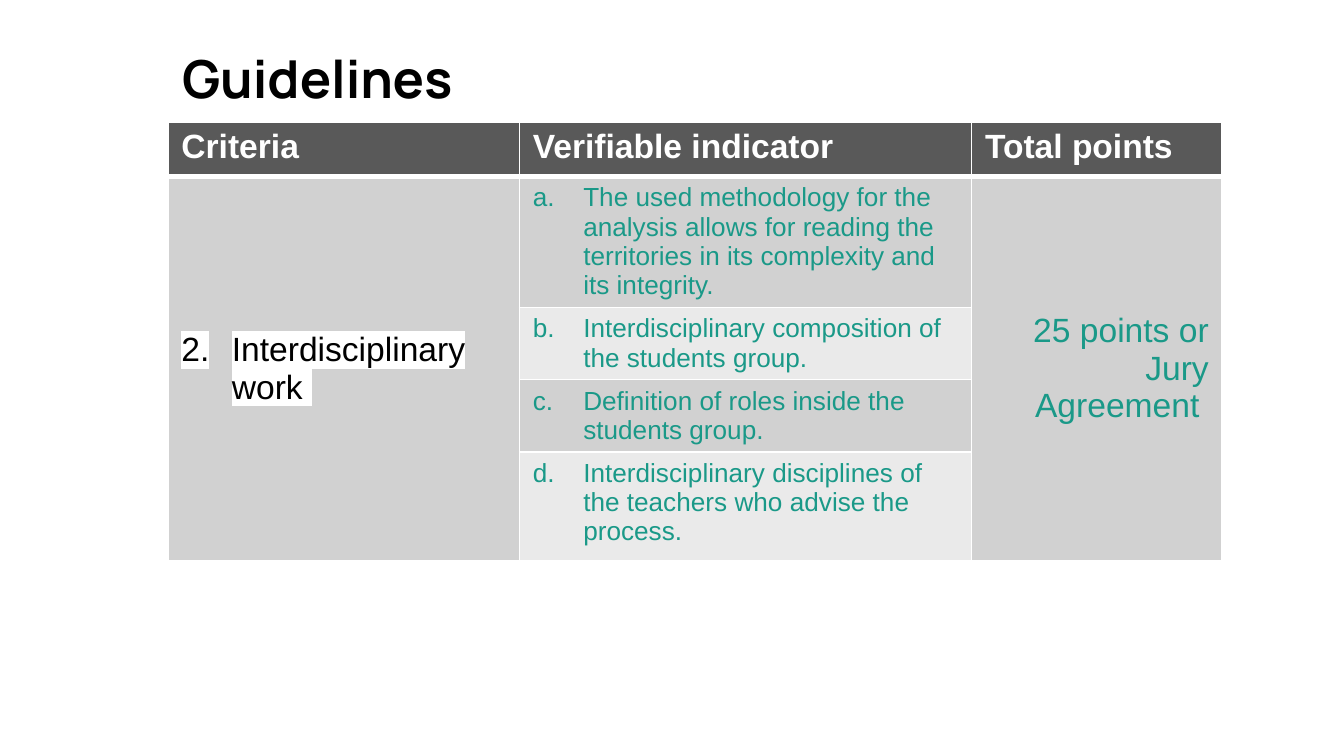
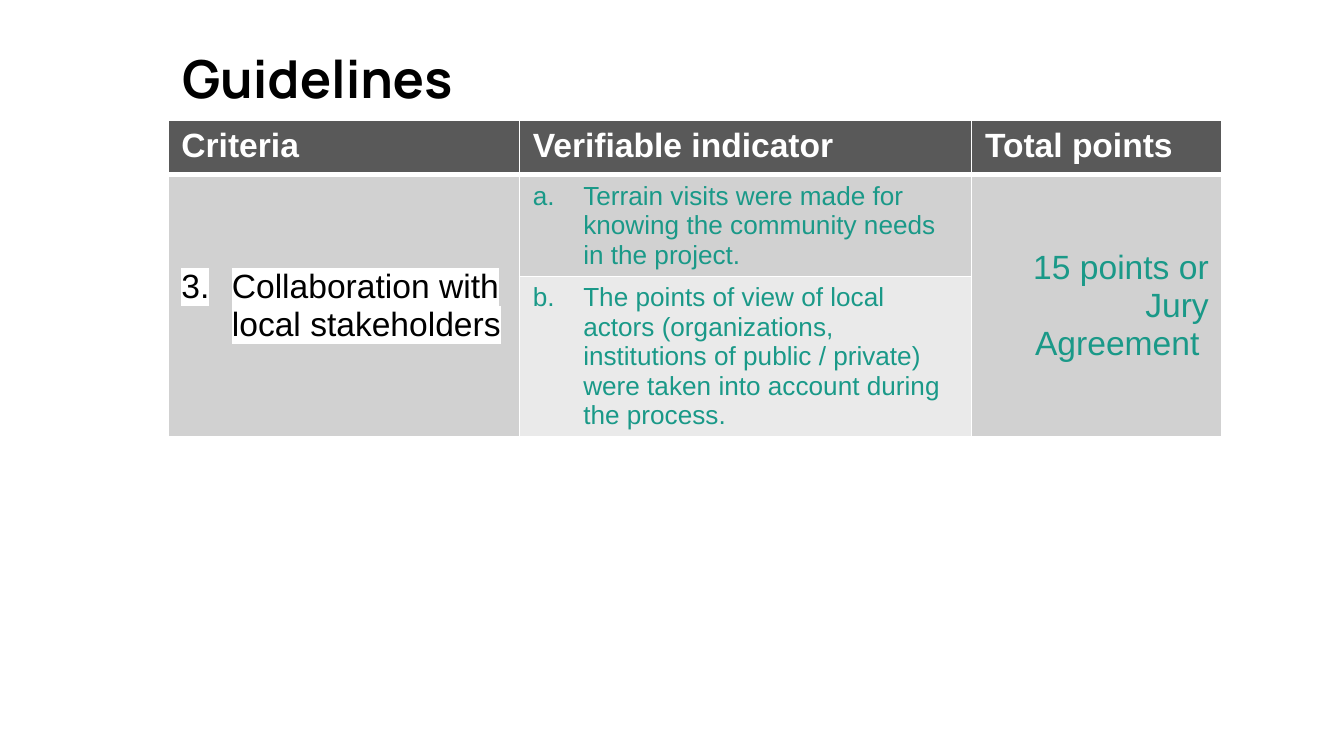
from dataclasses import dataclass

from lxml import etree
from pptx import Presentation
from pptx.dml.color import RGBColor
from pptx.enum.text import MSO_ANCHOR, MSO_AUTO_SIZE, PP_ALIGN
from pptx.oxml.ns import qn
from pptx.util import Pt

PX = 9525
TOP, MIDDLE = MSO_ANCHOR.TOP, MSO_ANCHOR.MIDDLE
LEFT, RIGHT = PP_ALIGN.LEFT, PP_ALIGN.RIGHT
NO_FIT = MSO_AUTO_SIZE.NONE


@dataclass(frozen=True)
class Theme:
    black: str = "000000"
    white: str = "FFFFFF"
    teal: str = "1A9988"
    header: str = "595959"
    bands: tuple = ("D1D1D1", "EAEAEA")
    title_font: str = "Manrope"
    body_font: str = "Arial"
    title_size: int = 28
    label_size: int = 18
    item_size: int = 14


T = Theme()
TITLE = "Guidelines"
HEADINGS = ["Criteria", "Verifiable indicator", "Total points"]
COL_WIDTHS = [251, 323, 179]
TABLE_LEFT = 120
ROW_H = 39
INDENT = 36

SLIDES = [
    {
        "top": 87, "height": 324, "last_row": 78,
        "number": 2, "criterion": "Interdisciplinary work ",
        "points": "25 points or Jury Agreement ",
        "indicators": [
            "The used methodology for the analysis allows for reading the "
            "territories in its complexity and its integrity.",
            "Interdisciplinary composition of the students group.",
            "Definition of roles inside the students group.",
            "Interdisciplinary disciplines of the teachers who advise the process.",
        ],
    },
    {
        "top": 86, "height": 237, "last_row": 98,
        "number": 3, "criterion": "Collaboration with local stakeholders",
        "points": "15 points or Jury Agreement ",
        "indicators": [
            "Terrain visits were made for knowing the community needs in the project.",
            "The points of view of local actors (organizations, institutions of "
            "public / private) were taken into account during the process.",
        ],
    },
]


def write(tf, text, size, color, font=T.body_font, bold=False, align=LEFT,
          highlight=None, numbering=None):
    """Add one run; numbering is a pair of scheme and first number."""
    p = tf.paragraphs[0]
    p.alignment = align
    if numbering:
        scheme, start = numbering
        pPr = p._p.get_or_add_pPr()
        pPr.set("marL", str(INDENT * PX))
        pPr.set("indent", str(-INDENT * PX))
        etree.SubElement(pPr, qn("a:buAutoNum"), type=scheme, startAt=str(start))
    r = p.add_run()
    r.text = text
    r.font.size = Pt(size)
    r.font.bold = bold
    r.font.color.rgb = RGBColor.from_string(color)
    r.font.name = font
    if highlight:
        mark = etree.Element(qn("a:highlight"))
        etree.SubElement(mark, qn("a:srgbClr"), val=highlight)
        r._r.rPr.find(qn("a:solidFill")).addnext(mark)


def style_cell(cell, fill, bottom=1):
    cell.fill.solid()
    cell.fill.fore_color.rgb = RGBColor.from_string(fill)
    tcPr = cell._tc.get_or_add_tcPr()
    widths = {"lnL": 1, "lnR": 1, "lnT": 1, "lnB": bottom}
    for i, (side, width) in enumerate(widths.items()):
        ln = etree.Element(qn("a:" + side), w=str(Pt(width)))
        line_fill = etree.SubElement(ln, qn("a:solidFill"))
        etree.SubElement(line_fill, qn("a:srgbClr"), val=T.white)
        tcPr.insert(i, ln)


prs = Presentation()
prs.slide_width, prs.slide_height = 960 * PX, 540 * PX

for data in SLIDES:
    s = prs.slides.add_slide(prs.slide_layouts[5])

    title = s.shapes.title
    title.left, title.top = 120 * PX, 23 * PX
    title.width, title.height = 612 * PX, 57 * PX
    tf = title.text_frame
    tf.auto_size = NO_FIT
    tf.vertical_anchor = TOP
    tf.margin_left = tf.margin_right = tf.margin_top = tf.margin_bottom = 10 * PX
    write(tf, TITLE, T.title_size, T.black, T.title_font, bold=True,
          highlight=T.white)

    indicators = data["indicators"]
    last = len(indicators)
    frame = s.shapes.add_table(last + 1, len(HEADINGS), TABLE_LEFT * PX,
                               data["top"] * PX, sum(COL_WIDTHS) * PX,
                               data["height"] * PX)
    table = frame.table
    for col, width in zip(table.columns, COL_WIDTHS):
        col.width = width * PX
    for row in table.rows:
        row.height = ROW_H * PX
    table.rows[last].height = data["last_row"] * PX
    frame.height = data["height"] * PX

    for c, heading in enumerate(HEADINGS):
        cell = table.cell(0, c)
        style_cell(cell, T.header, bottom=3)
        write(cell.text_frame, heading, T.label_size, T.white, bold=True)

    for i, text in enumerate(indicators):
        band = T.bands[i % 2]
        for c, fill in enumerate([T.bands[0], band, T.bands[0]]):
            style_cell(table.cell(i + 1, c), fill)
        write(table.cell(i + 1, 1).text_frame, text, T.item_size, T.teal,
              numbering=("alphaLcPeriod", i + 1))

    criterion, points = table.cell(1, 0), table.cell(1, 2)
    for c, cell in ((0, criterion), (2, points)):
        cell.merge(table.cell(last, c))
        cell.vertical_anchor = MIDDLE
    write(criterion.text_frame, data["criterion"], T.label_size, T.black,
          highlight=T.white, numbering=("arabicPeriod", data["number"]))
    write(points.text_frame, data["points"], T.label_size, T.teal, align=RIGHT)

prs.save("out.pptx")
